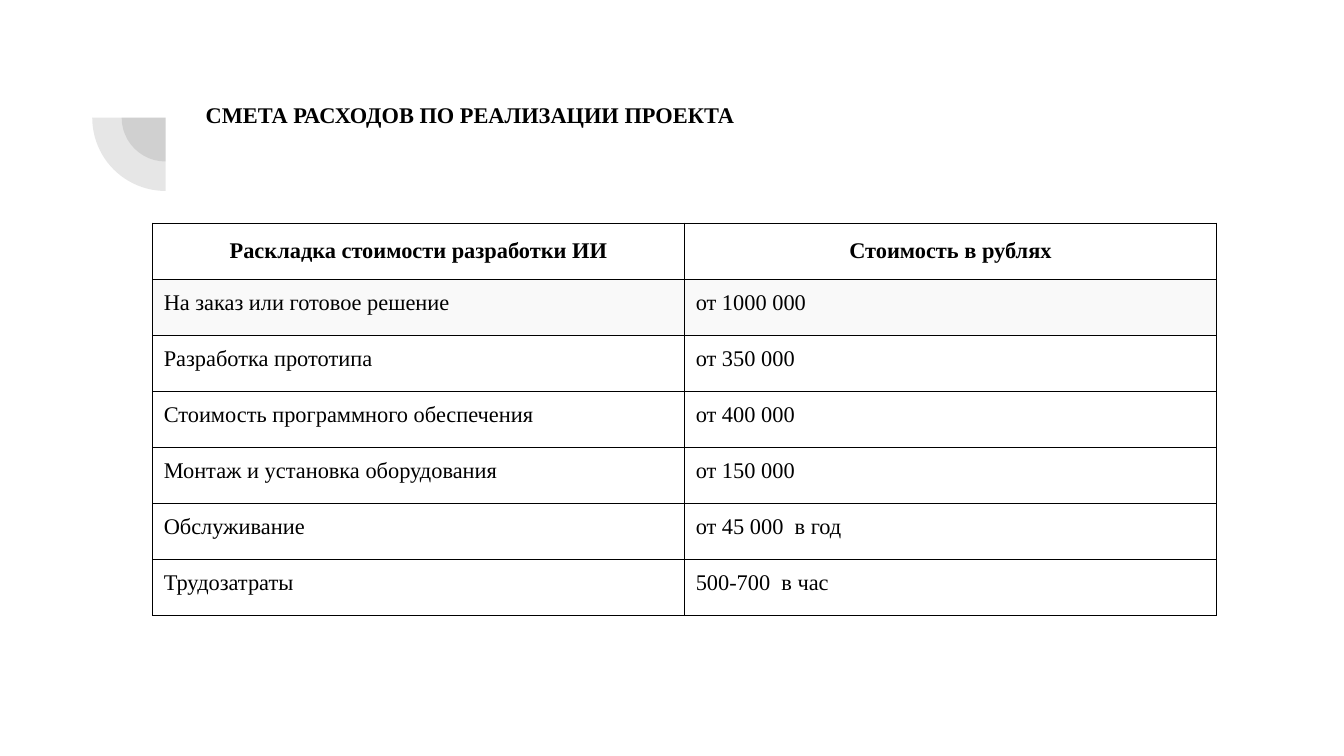
from lxml import etree
from pptx import Presentation
from pptx.dml.color import RGBColor
from pptx.enum.shapes import MSO_SHAPE
from pptx.enum.text import MSO_ANCHOR, PP_ALIGN
from pptx.oxml.ns import qn
from pptx.util import Pt

PIE = MSO_SHAPE.PIE
TOP, MIDDLE = MSO_ANCHOR.TOP, MSO_ANCHOR.MIDDLE
LEFT, CENTER = PP_ALIGN.LEFT, PP_ALIGN.CENTER

BLACK = RGBColor(0x00, 0x00, 0x00)
WHITE = RGBColor(0xFF, 0xFF, 0xFF)
GREY = RGBColor(0x42, 0x42, 0x42)
PALE = RGBColor(0xF9, 0xF9, 0xF9)
FONT = "Times New Roman"

TITLE = "СМЕТА РАСХОДОВ ПО РЕАЛИЗАЦИИ ПРОЕКТА"
COSTS = [
    ("Раскладка стоимости разработки ИИ", "Стоимость в рублях"),
    ("На заказ или готовое решение", "от 1000 000"),
    ("Разработка прототипа", "от 350 000"),
    ("Стоимость программного обеспечения", "от 400 000"),
    ("Монтаж и установка оборудования", "от 150 000"),
    ("Обслуживание", "от 45 000  в год"),
    ("Трудозатраты", "500-700  в час"),
]
COL_WIDTH, ROW_HEIGHT = 285, 30


def write_text(tf, text, *, size=12, bold=False, color=BLACK, align=LEFT):
    p = tf.paragraphs[0]
    p.alignment = align
    r = p.add_run()
    r.text = text
    r.font.name = FONT
    r.font.size = Pt(size)
    r.font.bold = bold
    r.font.color.rgb = color


def set_margins(box, margin):
    """Give a text frame or a table cell the same inset on all sides."""
    box.margin_left = box.margin_right = Pt(margin)
    box.margin_top = box.margin_bottom = Pt(margin)


def add_quarter(s, cx, cy, radius):
    """Add a translucent lower-left quarter disc around (cx, cy)."""
    sp = s.shapes.add_shape(PIE, Pt(cx - radius), Pt(cy - radius),
                            Pt(2 * radius), Pt(2 * radius))
    sp.adjustments[0] = 108
    sp.adjustments[1] = 162
    sp.rotation = 270
    sp.shadow.inherit = False
    sp.line.fill.background()
    sp.fill.solid()
    sp.fill.fore_color.rgb = GREY
    color = sp._element.spPr.find(qn("a:solidFill"))[0]
    etree.SubElement(color, qn("a:alpha"), val="13000")


def add_title(s):
    sp = s.shapes.title
    sp.left, sp.top, sp.width, sp.height = Pt(103), Pt(46.8), Pt(553.7), Pt(78.5)
    tf = sp.text_frame
    tf.word_wrap = True
    tf.vertical_anchor = TOP
    set_margins(tf, 7.2)
    write_text(tf, TITLE, bold=True)


def set_borders(cell, color, width):
    tcPr = cell._tc.get_or_add_tcPr()
    for side in ("lnL", "lnR", "lnT", "lnB"):
        ln = etree.SubElement(tcPr, qn(f"a:{side}"), w=str(Pt(width)))
        fill = etree.SubElement(ln, qn("a:solidFill"))
        etree.SubElement(fill, qn("a:srgbClr"), val=str(color))


def fill_cell(cell, text, fill, header):
    set_borders(cell, BLACK, 0.5)
    cell.fill.solid()
    cell.fill.fore_color.rgb = fill
    set_margins(cell, 6)
    cell.vertical_anchor = MIDDLE if header else TOP
    write_text(cell.text_frame, text, bold=header,
               align=CENTER if header else LEFT)


def add_cost_table(s, left, top):
    rows, cols = len(COSTS), len(COSTS[0])
    table = s.shapes.add_table(rows, cols, Pt(left), Pt(top),
                               Pt(cols * COL_WIDTH), Pt(rows * ROW_HEIGHT)).table
    table.first_row = table.horz_banding = False
    for col in table.columns:
        col.width = Pt(COL_WIDTH)
    for i, texts in enumerate(COSTS):
        table.rows[i].height = Pt(ROW_HEIGHT)
        for j, text in enumerate(texts):
            fill_cell(table.cell(i, j), text, PALE if i == 1 else WHITE, i == 0)


def main():
    prs = Presentation()
    prs.slide_width, prs.slide_height = Pt(720), Pt(405)
    s = prs.slides.add_slide(prs.slide_layouts[5])
    s.background.fill.solid()
    s.background.fill.fore_color.rgb = WHITE
    for radius in (23.5, 39.3):
        add_quarter(s, 88.7, 63, radius)
    add_title(s)
    add_cost_table(s, 81.75, 119.5)
    prs.save("out.pptx")


if __name__ == "__main__":
    main()
